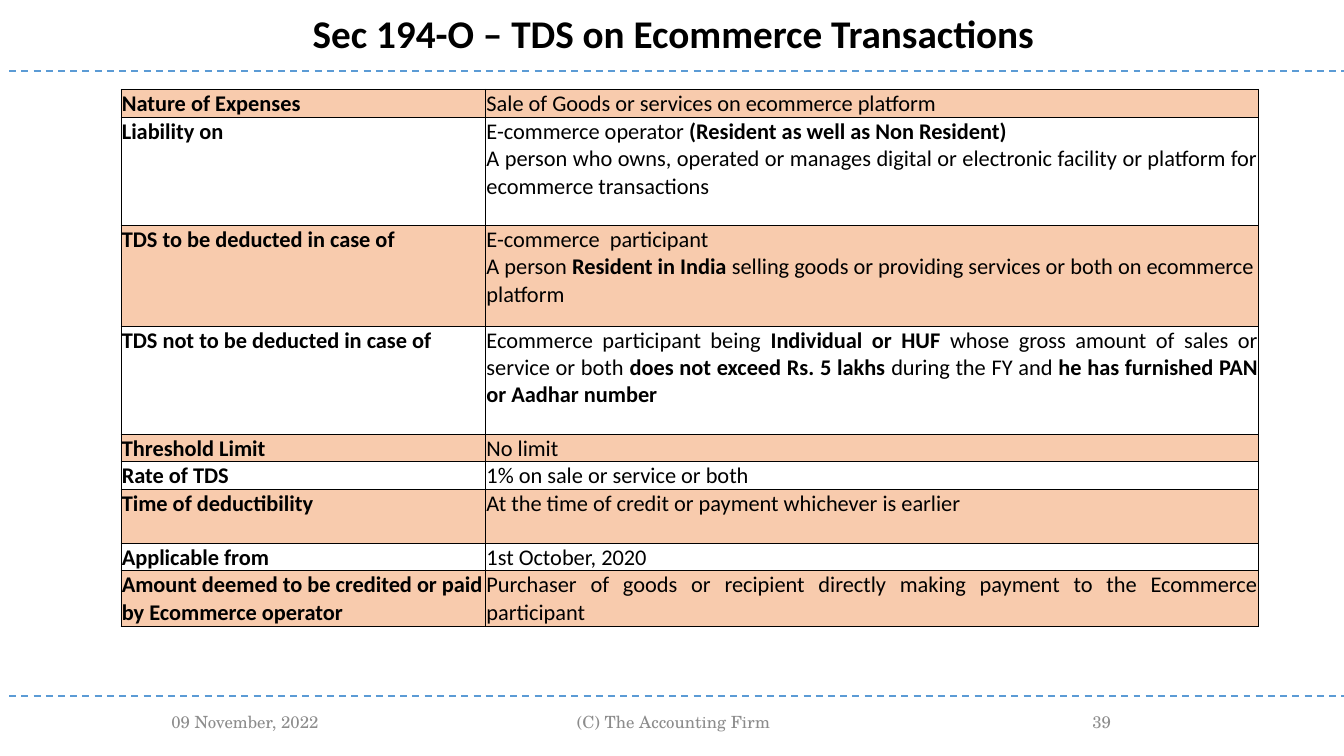
from dataclasses import dataclass

from lxml import etree
from pptx import Presentation
from pptx.dml.color import RGBColor
from pptx.enum.dml import MSO_LINE
from pptx.enum.shapes import MSO_CONNECTOR
from pptx.enum.text import MSO_ANCHOR, MSO_AUTO_SIZE, PP_ALIGN
from pptx.oxml.ns import qn
from pptx.util import Cm, Pt

STRAIGHT = MSO_CONNECTOR.STRAIGHT
DASH = MSO_LINE.DASH
TOP, MIDDLE = MSO_ANCHOR.TOP, MSO_ANCHOR.MIDDLE
LEFT, CENTER, JUSTIFY = PP_ALIGN.LEFT, PP_ALIGN.CENTER, PP_ALIGN.JUSTIFY
GROW = MSO_AUTO_SIZE.SHAPE_TO_FIT_TEXT


@dataclass(frozen=True)
class Theme:
    """Colours, fonts and sizes of the slide."""
    ink: str = "000000"
    muted: str = "8C8C8C"
    rule: str = "5B9BD5"
    band: str = "F8CBAD"
    body_font: str = "Calibri"
    footer_font: str = "TeX Gyre Schola"
    title_size: int = 28
    body_size: int = 16
    footer_size: int = 12
    rule_width: float = 1.25
    border_width: float = 0.5


THEME = Theme()

COLUMN_WIDTHS = (9.19, 19.48)
LIABILITY_ROW = 1
ROWS = (
    (0.69, True, "Nature of Expenses", "Sale of Goods or services on ecommerce platform"),
    (0.69, False, "Liability on",
     "E-commerce operator **(Resident as well as Non Resident)**"),
    (2.03, False, "",
     "A person who owns, operated or manages digital or electronic facility "
     "or platform for ecommerce transactions"),
    (2.54, True, "TDS to be deducted in case of",
     "E-commerce  participant\nA person **Resident in India **selling goods or "
     "providing services or both on ecommerce platform"),
    (2.72, False, "TDS not to be deducted in case of",
     "Ecommerce participant being **Individual or HUF **whose gross amount of sales "
     "or service or both **does not exceed Rs. 5 lakhs **during the FY and "
     "**he has furnished PAN or Aadhar number**"),
    (0.69, True, "Threshold Limit", "No limit"),
    (0.69, False, "Rate of TDS", "1% on sale or service or both"),
    (1.35, True, "Time of deductibility",
     "At the time of credit or payment whichever is earlier"),
    (0.69, False, "Applicable from", "1st October, 2020"),
    (1.4, True, "Amount deemed to be credited or paid by Ecommerce operator",
     "Purchaser of goods or recipient directly making payment to the "
     "Ecommerce participant"),
)
FOOTERS = (
    (2.39, 7.57, "09 November, 2022"),
    (11.3, 11.35, "(C) The Accounting Firm"),
    (23.98, 7.57, "39"),
)


def style_run(r, font, size, color, bold=False):
    """Format one run."""
    r.font.name = font
    r.font.size = Pt(size)
    r.font.bold = bold
    r.font.color.rgb = RGBColor.from_string(color)


def add_title(s, text):
    """Place and format the title placeholder."""
    sp = s.shapes.title
    sp.left, sp.top, sp.width, sp.height = Cm(1.04), Cm(0.1), Cm(31.85), Cm(1.45)
    tf = sp.text_frame
    tf.text = text
    tf.word_wrap = True
    tf.auto_size = GROW
    tf.vertical_anchor = TOP
    p = tf.paragraphs[0]
    p.alignment = CENTER
    style_run(p.runs[0], THEME.body_font, THEME.title_size, THEME.ink, True)


def add_rule(s, top):
    """Draw a dashed rule across the slide."""
    line = s.shapes.add_connector(STRAIGHT, Cm(0.23), Cm(top), Cm(33.87), Cm(top))
    line.line.color.rgb = RGBColor.from_string(THEME.rule)
    line.line.width = Pt(THEME.rule_width)
    line.line.dash_style = DASH
    etree.SubElement(line._element.spPr, qn("a:effectLst"))


def add_footer(s, left, width, text):
    """Add one centred footer text."""
    sp = s.shapes.add_textbox(Cm(left), Cm(17.68), Cm(width), Cm(1))
    tf = sp.text_frame
    tf.text = text
    tf.word_wrap = True
    tf.vertical_anchor = MIDDLE
    p = tf.paragraphs[0]
    p.alignment = CENTER
    style_run(p.runs[0], THEME.footer_font, THEME.footer_size, THEME.muted)


def set_borders(cell, hidden=""):
    """Draw the cell borders, leaving out the hidden side."""
    tc_pr = cell._tc.get_or_add_tcPr()
    for side in "LRTB":
        ln = etree.SubElement(tc_pr, qn(f"a:ln{side}"), w=str(Pt(THEME.border_width)))
        if side == hidden:
            etree.SubElement(ln, qn("a:noFill"))
        else:
            fill = etree.SubElement(ln, qn("a:solidFill"))
            etree.SubElement(fill, qn("a:srgbClr"), val=THEME.ink)


def fill_cell(cell, text, align, banded, hidden=""):
    """Write a cell with its ** marked bold parts, borders and fill."""
    cell.margin_left = cell.margin_right = cell.margin_top = Cm(0.02)
    cell.margin_bottom = 0
    p = cell.text_frame.paragraphs[0]
    p.alignment = align
    for i, part in enumerate(text.split("**")):
        for j, line in enumerate(part.split("\n")):
            if j:
                p.add_line_break()
            if line:
                r = p.add_run()
                r.text = line
                style_run(r, THEME.body_font, THEME.body_size, THEME.ink, i % 2 == 1)
    for br in p._p.findall(qn("a:br")):
        etree.SubElement(br, qn("a:rPr"), sz=str(THEME.body_size * 100))
    set_borders(cell, hidden)
    if banded:
        cell.fill.solid()
        cell.fill.fore_color.rgb = RGBColor.from_string(THEME.band)
    else:
        cell.fill.background()


def add_rules_table(s):
    """Add the two-column table of the section's rules."""
    height = sum(row[0] for row in ROWS)
    frame = s.shapes.add_table(len(ROWS), len(COLUMN_WIDTHS), Cm(3.05), Cm(2.25),
                               Cm(sum(COLUMN_WIDTHS)), Cm(height))
    table = frame.table
    table.first_row = table.horz_banding = False
    for column, width in zip(table.columns, COLUMN_WIDTHS):
        column.width = Cm(width)
    hidden_sides = {LIABILITY_ROW: "B", LIABILITY_ROW + 1: "T"}
    for i, (row_height, banded, label, details) in enumerate(ROWS):
        table.rows[i].height = Cm(row_height)
        bold_label = f"**{label}**" if label else ""
        fill_cell(table.cell(i, 0), bold_label, LEFT, banded)
        align = LEFT if "\n" in details else JUSTIFY
        fill_cell(table.cell(i, 1), details, align, banded, hidden_sides.get(i, ""))
    table.cell(LIABILITY_ROW, 0).merge(table.cell(LIABILITY_ROW + 1, 0))


def main():
    """Build the slide and save it."""
    prs = Presentation()
    prs.slide_width, prs.slide_height = Cm(33.87), Cm(19.05)
    s = prs.slides.add_slide(prs.slide_layouts[5])
    for footer in FOOTERS:
        add_footer(s, *footer)
    for top in (1.78, 17.53):
        add_rule(s, top)
    add_title(s, "Sec 194-O – TDS on Ecommerce Transactions")
    add_rules_table(s)
    prs.save("out.pptx")


if __name__ == "__main__":
    main()
